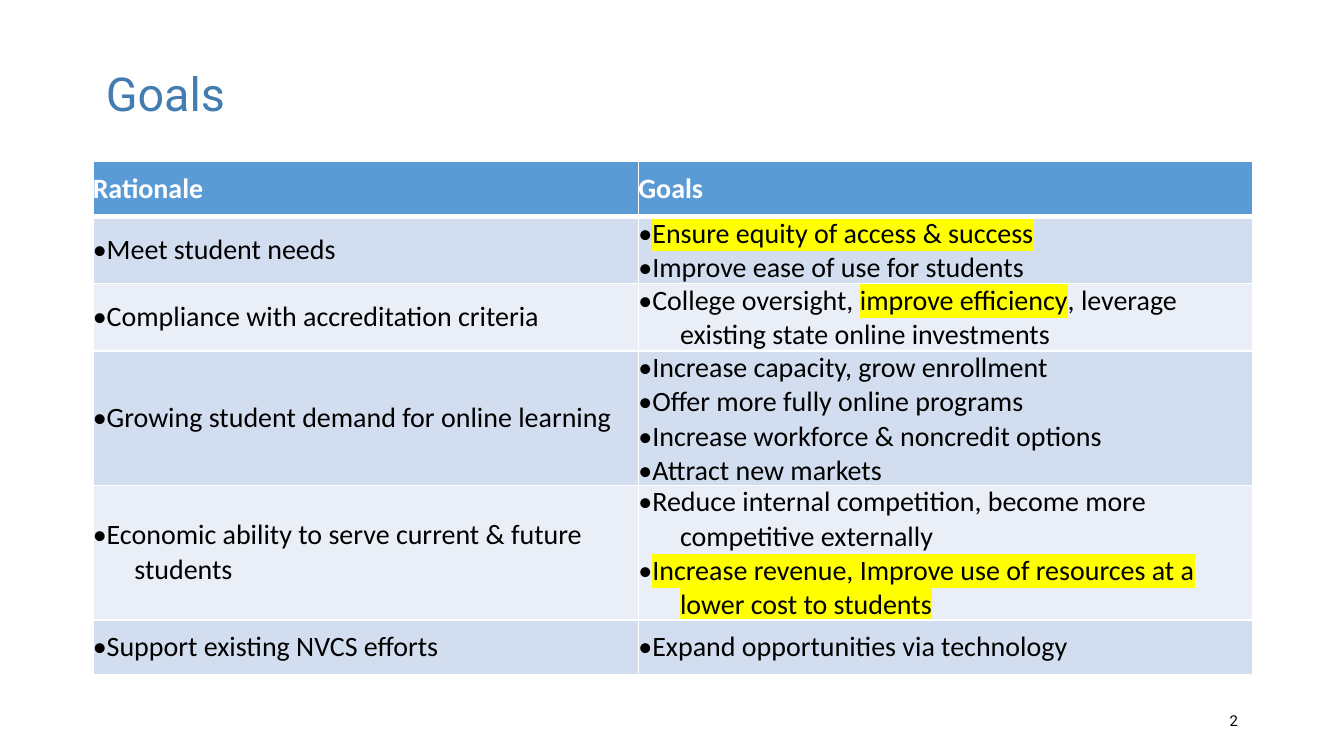
from lxml.etree import SubElement
from pptx import Presentation
from pptx.dml.color import RGBColor
from pptx.enum.text import MSO_ANCHOR, PP_ALIGN
from pptx.oxml.ns import qn
from pptx.util import Inches, Pt

COLORS = {
    "title": "427CB1",
    "header": "5B9BD5",
    "band_dark": "D2DEEF",
    "band_light": "EAEFF7",
    "white": "FFFFFF",
    "black": "000000",
    "highlight": "FFFF00",
}
HANGING = 0.31
ROW_HEIGHT = 0.41  # least height; rows grow with their text
COLUMN_WIDTHS = (4.06, 4.57)
HEADINGS = ("Rationale", "Goals")

# Rationale and its goals; asterisks enclose highlighted words
ROWS = [
    ("Meet student needs",
     ["*Ensure equity of access & success*", "Improve ease of use for students"]),
    ("Compliance with accreditation criteria",
     ["College oversight, *improve efficiency*, leverage existing state online investments"]),
    ("Growing student demand for online learning",
     ["Increase capacity, grow enrollment", "Offer more fully online programs",
      "Increase workforce & noncredit options", "Attract new markets"]),
    ("Economic ability to serve current & future students",
     ["Reduce internal competition, become more competitive externally",
      "*Increase revenue, Improve use of resources at a lower cost to students*"]),
    ("Support existing NVCS efforts", ["Expand opportunities via technology"]),
]


def add_run(paragraph, text, *, size, color, font="Calibri", bold=False, highlight=None):
    run = paragraph.add_run()
    run.text = text
    run.font.size = Pt(size)
    run.font.bold = bold
    run.font.color.rgb = RGBColor.from_string(COLORS[color])
    if highlight:
        # The highlight belongs between the fill and the font name
        mark = SubElement(run.font._element, qn("a:highlight"))
        SubElement(mark, qn("a:srgbClr"), val=COLORS[highlight])
    run.font.name = font


def add_label(slide, box, text, *, align=PP_ALIGN.LEFT, spacing=1.0, **font):
    frame = slide.shapes.add_textbox(*map(Inches, box)).text_frame
    frame.word_wrap = True
    frame.vertical_anchor = MSO_ANCHOR.MIDDLE
    paragraph = frame.paragraphs[0]
    paragraph.alignment = align
    paragraph.line_spacing = spacing
    add_run(paragraph, text, **font)


def format_cell(cell, fill, top=1, bottom=1):
    cell.margin_left = cell.margin_right = cell.margin_top = cell.margin_bottom = 0
    cell.vertical_anchor = MSO_ANCHOR.MIDDLE
    properties = cell._tc.get_or_add_tcPr()
    for side, width in (("L", 1), ("R", 1), ("T", top), ("B", bottom)):
        border = SubElement(properties, qn(f"a:ln{side}"), w=str(Pt(width)))
        SubElement(SubElement(border, qn("a:solidFill")), qn("a:srgbClr"), val=COLORS["white"])
    cell.fill.solid()
    cell.fill.fore_color.rgb = RGBColor.from_string(COLORS[fill])


def fill_bullets(cell, items):
    frame = cell.text_frame
    for index, item in enumerate(items):
        paragraph = frame.add_paragraph() if index else frame.paragraphs[0]
        indents = paragraph._p.get_or_add_pPr()
        indents.set("marL", str(Inches(HANGING)))
        indents.set("indent", str(-Inches(HANGING)))
        for part, words in enumerate(f"•{item}".split("*")):
            if words:
                add_run(paragraph, words, size=15, color="black",
                        highlight="highlight" if part % 2 else None)


def add_goals_table(slide, box):
    frame = slide.shapes.add_table(len(ROWS) + 1, len(HEADINGS), *map(Inches, box))
    table = frame.table
    for column, width in zip(table.columns, COLUMN_WIDTHS):
        column.width = Inches(width)
    for row in table.rows:
        row.height = Inches(ROW_HEIGHT)
    frame.width, frame.height = Inches(box[2]), Inches(box[3])

    # Header row
    for col, heading in enumerate(HEADINGS):
        cell = table.cell(0, col)
        format_cell(cell, "header", bottom=3)
        add_run(cell.text_frame.paragraphs[0], heading, size=15, color="white", bold=True)

    # Banded body rows
    for row, (rationale, goals) in enumerate(ROWS, start=1):
        for col, items in enumerate(([rationale], goals)):
            cell = table.cell(row, col)
            format_cell(cell, "band_dark" if row % 2 else "band_light",
                        top=3 if row == 1 else 1)
            fill_bullets(cell, items)


def main():
    deck = Presentation()
    deck.slide_width = Inches(10)
    deck.slide_height = deck.slide_width * 9 // 16
    slide = deck.slides.add_slide(deck.slide_layouts[6])

    # Title
    add_label(slide, (0.69, 0.3, 8.62, 0.84), "Goals", spacing=0.9,
              size=25, color="title", font="Roboto")
    add_goals_table(slide, (0.69, 1.2, 8.62, 3.81))
    # Slide number
    add_label(slide, (7.06, 5.21, 2.25, 0.3), "2", align=PP_ALIGN.RIGHT,
              size=8, color="black", font="Roboto")
    deck.save("out.pptx")


if __name__ == "__main__":
    main()
